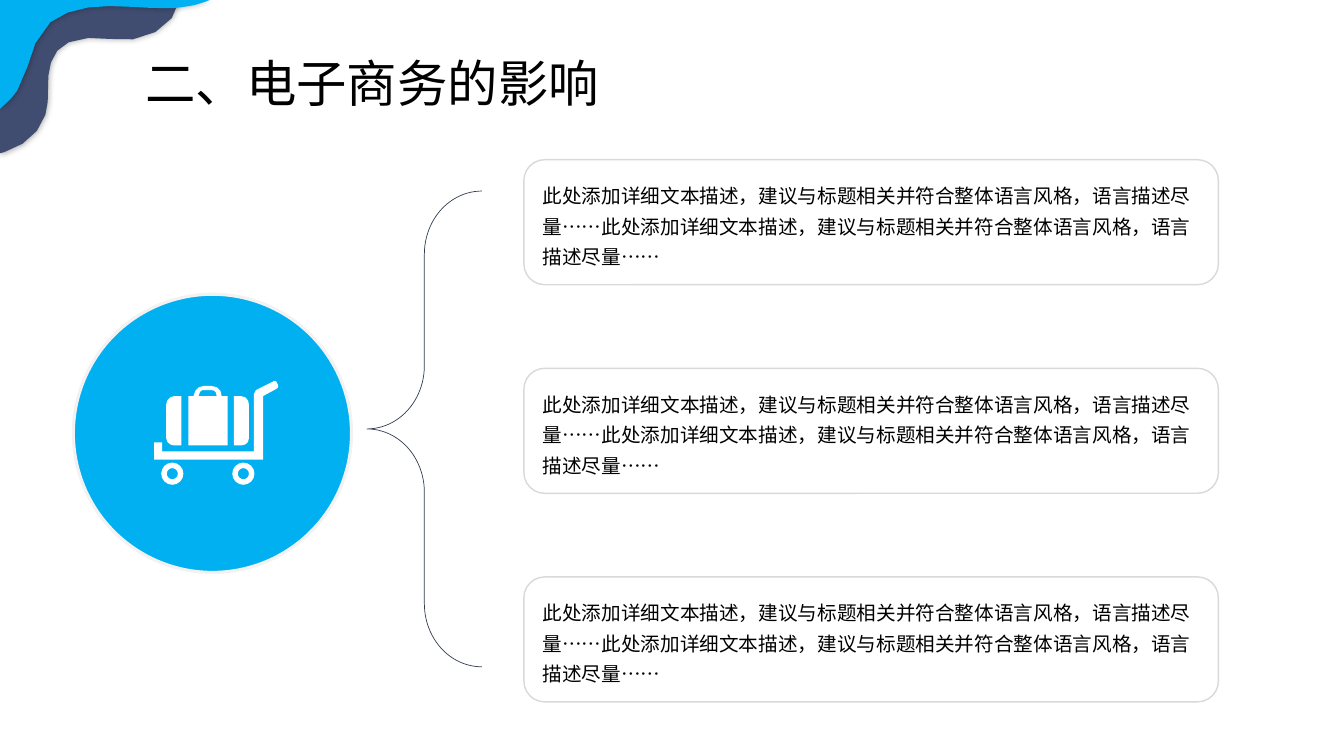
import math
import pptx
import pptx.util
import pptx.dml.color
import pptx.enum.shapes
import pptx.enum.text
import lxml.etree

TITLE = "二、电子商务的影响"
SENTENCE = "此处添加详细文本描述，建议与标题相关并符合整体语言风格，语言描述尽量……"
DESCRIPTIONS = [SENTENCE * 2] * 3
FONT = "Noto Sans CJK SC"
COLORS = {"navy": "404D70", "blue": "00B0F0", "black": "000000", "white": "FFFFFF",
          "ring": "F2F2F2", "brace": "333F50", "border": "D9D9D9"}

GRID = 0.72
CURVE_STEPS = 3
WHEEL_SIDES = 16
NAVY_WAVE = [
    (53, 0), (178, 0), (176, 19, 156, 36, 132, 39), (110, 41, 86, 33, 68, 42),
    (54, 48, 49, 62, 48, 75), (47, 88, 49, 101, 45, 114), (40, 131, 24, 145, 4, 151),
    (0, 152), (0, 84), (5, 81), (14, 75, 22, 68, 27, 60), (37, 43, 39, 23, 48, 7)]
BLUE_WAVE = [
    (0, 0), (208, 0), (203, 2), (193, 6, 182, 7, 172, 8), (151, 9, 130, 6, 108, 6),
    (87, 6, 65, 10, 50, 22), (29, 40, 31, 68, 17, 90), (13, 96, 8, 101, 2, 106), (0, 108)]
LUGGAGE = [
    [(165, 435), (165, 401), (165, 397, 169, 393, 173, 393), (180, 393), (180, 442),
     (173, 442), (169, 442, 165, 439, 165, 435)],
    [(247, 435), (247, 401), (247, 397, 244, 393, 239, 393), (232, 393), (232, 442),
     (239, 442), (244, 442, 247, 439, 247, 435)],
    [(220, 393), (220, 387, 216, 383, 210, 383), (202, 383), (197, 383, 193, 387, 192, 393),
     (187, 393), (187, 442), (226, 442), (226, 393)],
    [(197, 393), (198, 387, 201, 387, 202, 387), (210, 387), (213, 387, 215, 389, 215, 393)],
    [(274, 386), (261, 393), (261, 456), (153, 456), (153, 439), (161, 439), (161, 448),
     (252, 448), (252, 391), (254, 387), (270, 379),
     (272, 377, 275, 378, 275, 380), (277, 383, 276, 385, 274, 386)]]
WHEEL_CENTERS = [(171, 470), (241.5, 470)]
WHEEL_RADII = [11, 5.5]


def color(name):
    return pptx.dml.color.RGBColor.from_string(COLORS[name])


def trace(outline):
    points = [outline[0]]
    for segment in outline[1:]:
        if len(segment) == 2:
            points.append(segment)
            continue
        x0, y0 = points[-1]
        x1, y1, x2, y2, x3, y3 = segment
        for step in range(1, CURVE_STEPS + 1):
            t = step / CURVE_STEPS
            a, b, c, d = (1 - t) ** 3, 3 * t * (1 - t) ** 2, 3 * t * t * (1 - t), t ** 3
            points.append((a * x0 + b * x1 + c * x2 + d * x3,
                           a * y0 + b * y1 + c * y2 + d * y3))
    return points


def circle(center, radius):
    angles = [2 * math.pi * side / WHEEL_SIDES for side in range(WHEEL_SIDES)]
    return [(center[0] + radius * math.cos(angle), center[1] + radius * math.sin(angle))
            for angle in angles]


def paint(shape, fill, line=None, width=0):
    shape.shadow.inherit = False
    if fill:
        shape.fill.solid()
        shape.fill.fore_color.rgb = color(fill)
    else:
        shape.fill.background()
    if line:
        shape.line.color.rgb = color(line)
        shape.line.width = pptx.util.Pt(width)
    else:
        shape.line.fill.background()


def add_outline(slide, contours, fill):
    scaled = [[(pptx.util.Pt(x * GRID), pptx.util.Pt(y * GRID)) for x, y in contour]
              for contour in contours]
    builder = slide.shapes.build_freeform(*scaled[0][0])
    for index, contour in enumerate(scaled):
        if index:
            builder.move_to(*contour[0])
        builder.add_line_segments(contour[1:], close=True)
    shape = builder.convert_to_shape()
    paint(shape, fill)
    return shape


def add_glow(shape):
    effects = shape._element.spPr.find(pptx.oxml.ns.qn("a:effectLst"))
    shadow = lxml.etree.SubElement(effects, pptx.oxml.ns.qn("a:outerShdw"),
                                   blurRad=str(pptx.util.Pt(5)), algn="ctr", rotWithShape="0")
    shade = lxml.etree.SubElement(shadow, pptx.oxml.ns.qn("a:srgbClr"), val=COLORS["black"])
    lxml.etree.SubElement(shade, pptx.oxml.ns.qn("a:alpha"), val="40000")


def add_preset(slide, kind, box, fill, line, width):
    shape = slide.shapes.add_shape(kind, *map(pptx.util.Pt, box))
    paint(shape, fill, line, width)
    return shape


def write(shape, text, size, spacing):
    frame = shape.text_frame
    frame.word_wrap = True
    frame.vertical_anchor = pptx.enum.text.MSO_ANCHOR.TOP
    frame.auto_size = pptx.enum.text.MSO_AUTO_SIZE.SHAPE_TO_FIT_TEXT
    paragraph = frame.paragraphs[0]
    paragraph.text = text
    paragraph.alignment = pptx.enum.text.PP_ALIGN.LEFT
    paragraph.line_spacing = spacing
    paragraph.space_before = pptx.util.Pt(0)
    paragraph.font.size = pptx.util.Pt(size)
    paragraph.font.name = FONT
    paragraph.font.color.rgb = color("black")
    for run in paragraph.runs:
        properties = run.font._element
        lxml.etree.SubElement(properties, pptx.oxml.ns.qn("a:ea"), typeface=FONT)


def main():
    presentation = pptx.Presentation()
    presentation.slide_width = pptx.util.Pt(960)
    presentation.slide_height = pptx.util.Pt(540)
    slide = presentation.slides.add_slide(presentation.slide_layouts[5])
    kinds = pptx.enum.shapes.MSO_SHAPE

    for outline, fill in [(NAVY_WAVE, "navy"), (BLUE_WAVE, "blue")]:
        add_glow(add_outline(slide, [trace(outline)], fill))

    title = slide.shapes.title
    title.left, title.top, title.width, title.height = map(pptx.util.Pt, (96.6, 27.4, 362, 54.7))
    write(title, TITLE, 36, 1.14)

    add_preset(slide, kinds.OVAL, (52.4, 210.2, 198.7, 198.7), "blue", "ring", 2.25)
    brace = add_preset(slide, kinds.LEFT_BRACE, (262.1, 136.5, 82.1, 339.8), None, "brace", 0.5)
    brace.adjustments[0] = 0.55
    wheels = [circle(center, radius) for center in WHEEL_CENTERS for radius in WHEEL_RADII]
    add_outline(slide, [trace(outline) for outline in LUGGAGE] + wheels, "white")

    for row, description in enumerate(DESCRIPTIONS):
        top = 114.1 + row * 149
        add_preset(slide, kinds.ROUNDED_RECTANGLE, (374.2, top, 496.1, 89.3),
                   "white", "border", 1)
        box = slide.shapes.add_textbox(*map(pptx.util.Pt, (380.5, top + 8.7, 481, 72)))
        write(box, description, 14, 1.3)

    presentation.save("out.pptx")


if __name__ == "__main__":
    main()
